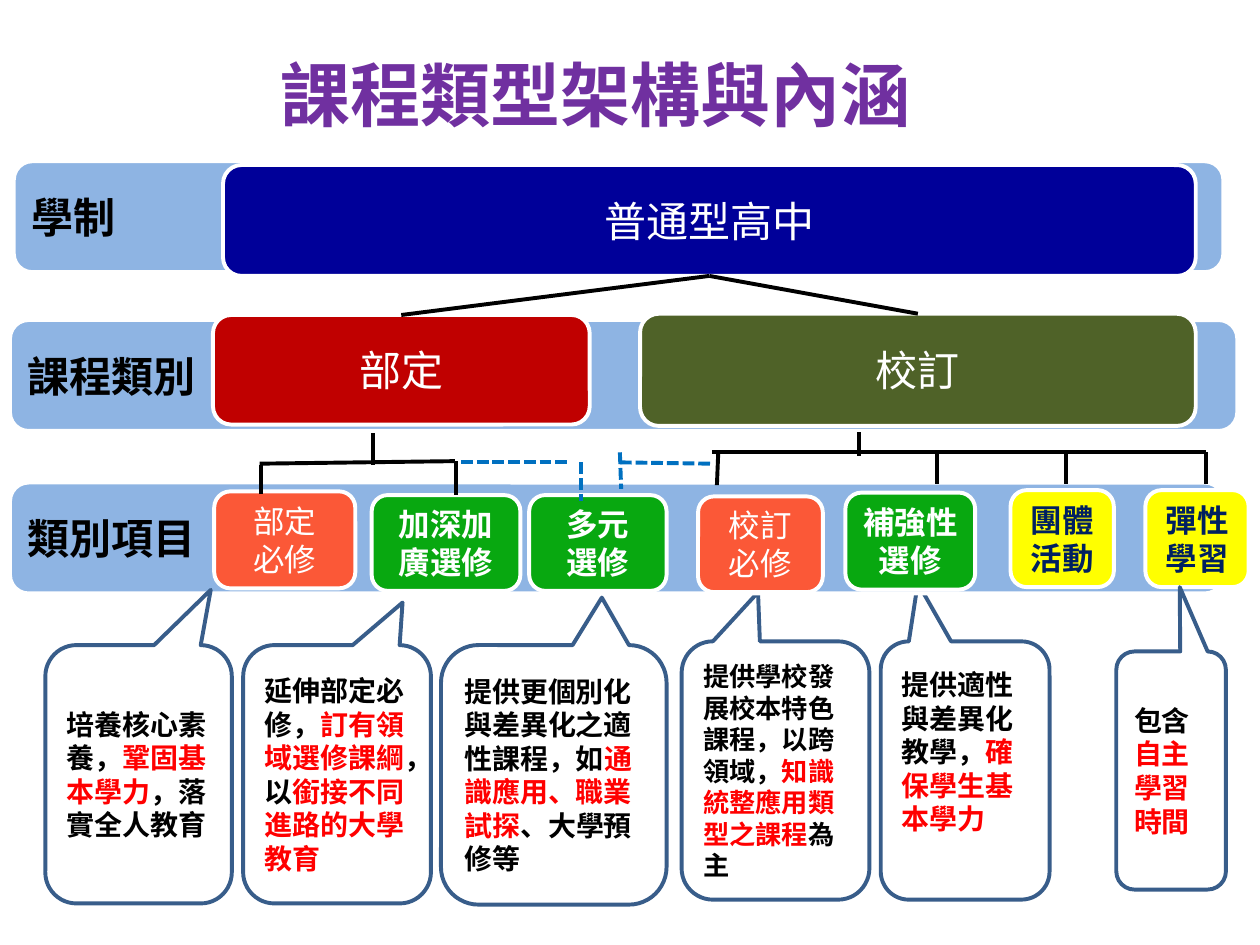
"""Builds a slide on the course types of general senior high schools."""
import pptx
import pptx.util
import pptx.dml.color
import pptx.enum.dml
import pptx.enum.shapes
import pptx.enum.text
import pptx.oxml.ns
from lxml import etree

Inches, Pt = pptx.util.Inches, pptx.util.Pt
RGB = pptx.dml.color.RGBColor.from_string
KIND = pptx.enum.shapes.MSO_SHAPE
ALIGN = pptx.enum.text.PP_ALIGN
qn = pptx.oxml.ns.qn

THEME = {
    "font": "Noto Sans CJK SC",
    "title": 40, "head": 24, "item": 18, "note": 16, "small": 15, "line": 2.25,
    "purple": "7030A0", "band": "8EB4E3", "white": "FFFFFF", "black": "000000",
    "red": "FF0000", "brick": "C00000", "olive": "4F6228", "navy": "000099",
    "coral": "FB5837", "green": "08A810", "yellow": "FFFF00", "ink": "002060",
    "edge": "385D8A", "dash": "0070C0",
}


def write(frame, rows, size, bold, align):
    for i, row in enumerate(rows):
        para = frame.paragraphs[0] if i == 0 else frame.add_paragraph()
        para.alignment = align
        for text, color in row:
            run = para.add_run()
            run.text = text
            run.font.size = Pt(THEME[size])
            run.font.bold = bold
            run.font.name = THEME["font"]
            run.font.color.rgb = RGB(THEME[color])
            east = etree.SubElement(run.font._element, qn("a:ea"))
            east.set("typeface", THEME["font"])


def block(kind, at, fill, edge):
    shape = slide.shapes.add_shape(kind, *map(Inches, at))
    shape.shadow.inherit = False
    if fill:
        shape.fill.solid()
        shape.fill.fore_color.rgb = RGB(THEME[fill])
    else:
        shape.fill.background()
    shape.line.color.rgb = RGB(THEME[edge])
    shape.line.width = Pt(THEME["line"])
    shape.text_frame.word_wrap = True
    shape.text_frame.vertical_anchor = pptx.enum.text.MSO_ANCHOR.MIDDLE
    return shape


deck = pptx.Presentation()
deck.slide_width, deck.slide_height = Inches(10), Inches(7.5)
slide = deck.slides.add_slide(deck.slide_layouts[6])

title = slide.shapes.add_textbox(Inches(0), Inches(0.36), Inches(9.25), Inches(0.77))
title.text_frame.word_wrap = True
write(title.text_frame, [[("課程類型架構與內涵", "purple")]], "title", True, ALIGN.LEFT)
indent = title.text_frame.paragraphs[0]._p.get_or_add_pPr()
indent.set("marL", str(Inches(2.13)))
indent.set("indent", "0")

notes = [
    ((6.99, 5.09, 1.34, 2.05), (-0.28, -0.726), "note",
     [("提供適性與差異化教學，", "black"), ("確保學生基本學力", "red")]),
    ((5.41, 5.09, 1.49, 2.05), (-0.093, -0.69), "small",
     [("提供學校發展校本特色課程，以跨領域，", "black"),
      ("知識統整應用類型之課程", "red"), ("為主", "black")]),
    ((1.93, 5.12, 1.49, 2.05), (0.349, -0.665), "note",
     [("延伸部定必修，", "black"), ("訂有領域選修課綱", "red"),
      ("，以", "black"), ("銜接不同進路的大學教育", "red")]),
    ((0.36, 5.12, 1.48, 2.05), (0.387, -0.714), "note",
     [("培養核心素養，", "black"), ("鞏固基本學力", "red"), ("，落實全人教育", "black")]),
    ((3.5, 5.12, 1.79, 2.06), (0.213, -0.683), "note",
     [("提供更個別化與差異化之適性課程，如", "black"),
      ("通識應用、職業試探", "red"), ("、大學預修等", "black")]),
    ((8.86, 5.17, 0.87, 1.89), (0.079, -0.77), "note",
     [("包含", "black"), ("自主學習時間", "red")]),
]
bands = [
    ((0.08, 3.83, 9.63, 0.88), "類別項目"),
    ((0.08, 2.54, 9.74, 0.88), "課程類別"),
    ((0.11, 1.28, 9.6, 0.88), "學制"),
]
boxes = [
    ((1.77, 1.31, 7.72, 0.88), "navy", "white", "head", False, ["普通型高中"]),
    ((1.69, 2.5, 2.99, 0.87), "brick", "white", "head", False, ["部定"]),
    ((5.08, 2.49, 4.41, 0.89), "olive", "white", "head", False, ["校訂"]),
    ((1.7, 3.9, 1.12, 0.77), "coral", "white", "item", False, ["部定", "必修"]),
    ((2.95, 3.93, 1.18, 0.76), "green", "white", "item", True, ["加深加廣選修"]),
    ((4.2, 3.93, 1.09, 0.76), "green", "white", "item", True, ["多元", "選修"]),
    ((5.54, 3.94, 0.99, 0.76), "coral", "white", "item", False, ["校訂", "必修"]),
    ((6.71, 3.91, 1.03, 0.77), "green", "white", "item", True, ["補強性", "選修"]),
    ((8.02, 3.89, 0.82, 0.77), "yellow", "ink", "item", True, ["團體活動"]),
    ((9.09, 3.89, 0.82, 0.77), "yellow", "ink", "item", True, ["彈性學習"]),
]

calls = []
for n, (at, tip, size, row) in enumerate(notes):
    call = block(KIND.ROUNDED_RECTANGULAR_CALLOUT, at, None, "edge")
    call.adjustments[0], call.adjustments[1] = tip
    write(call.text_frame, [row], size, True, ALIGN.LEFT)
    calls.append(call)
calls[0].text_frame.margin_bottom = Inches(0.35)

for at, text in bands:
    band = block(KIND.ROUNDED_RECTANGLE, at, "band", "white")
    write(band.text_frame, [[(text, "black")]], "head", True, ALIGN.LEFT)

nodes = []
for at, fill, color, size, bold, rows in boxes:
    node = block(KIND.ROUNDED_RECTANGLE, at, fill, "white")
    write(node.text_frame, [[(text, color)] for text in rows], size, bold, ALIGN.CENTER)
    nodes.append(node)

for call in calls[2:]:
    slide.shapes._spTree.append(call._element)

solid = [
    (2.96, 3.44, 2.96, 3.69), (2.06, 3.68, 3.61, 3.66), (3.62, 3.66, 3.62, 3.93),
    (2.07, 3.69, 2.07, 3.92), (5.65, 3.59, 9.57, 3.59), (5.7, 3.6, 5.69, 3.85),
    (6.82, 3.43, 6.82, 3.62),
] + [(x, 3.59, x, 3.84) for x in (7.44, 8.46, 9.57)]
dashed = [
    (3.66, 3.67, 4.5, 3.67), (4.61, 3.67, 4.61, 3.98),
    (4.92, 3.67, 5.64, 3.68), (4.92, 3.59, 4.93, 3.88),
]
forks = [(5.63, 2.19, 3.19, 2.5), (5.63, 2.19, 7.28, 2.49)]
for ends in solid + dashed + forks:
    link = slide.shapes.add_connector(
        pptx.enum.shapes.MSO_CONNECTOR.STRAIGHT, *map(Inches, ends))
    link.line.width = Pt(THEME["line"])
    link.line.color.rgb = RGB(THEME["dash" if ends in dashed else "black"])
    if ends in dashed:
        link.line.dash_style = pptx.enum.dml.MSO_LINE.SQUARE_DOT
    if ends in forks:
        link.begin_connect(nodes[0], 2)
        link.end_connect(nodes[1 + forks.index(ends)], 0)
    etree.SubElement(link._element.spPr, qn("a:effectLst"))

deck.save("out.pptx")
